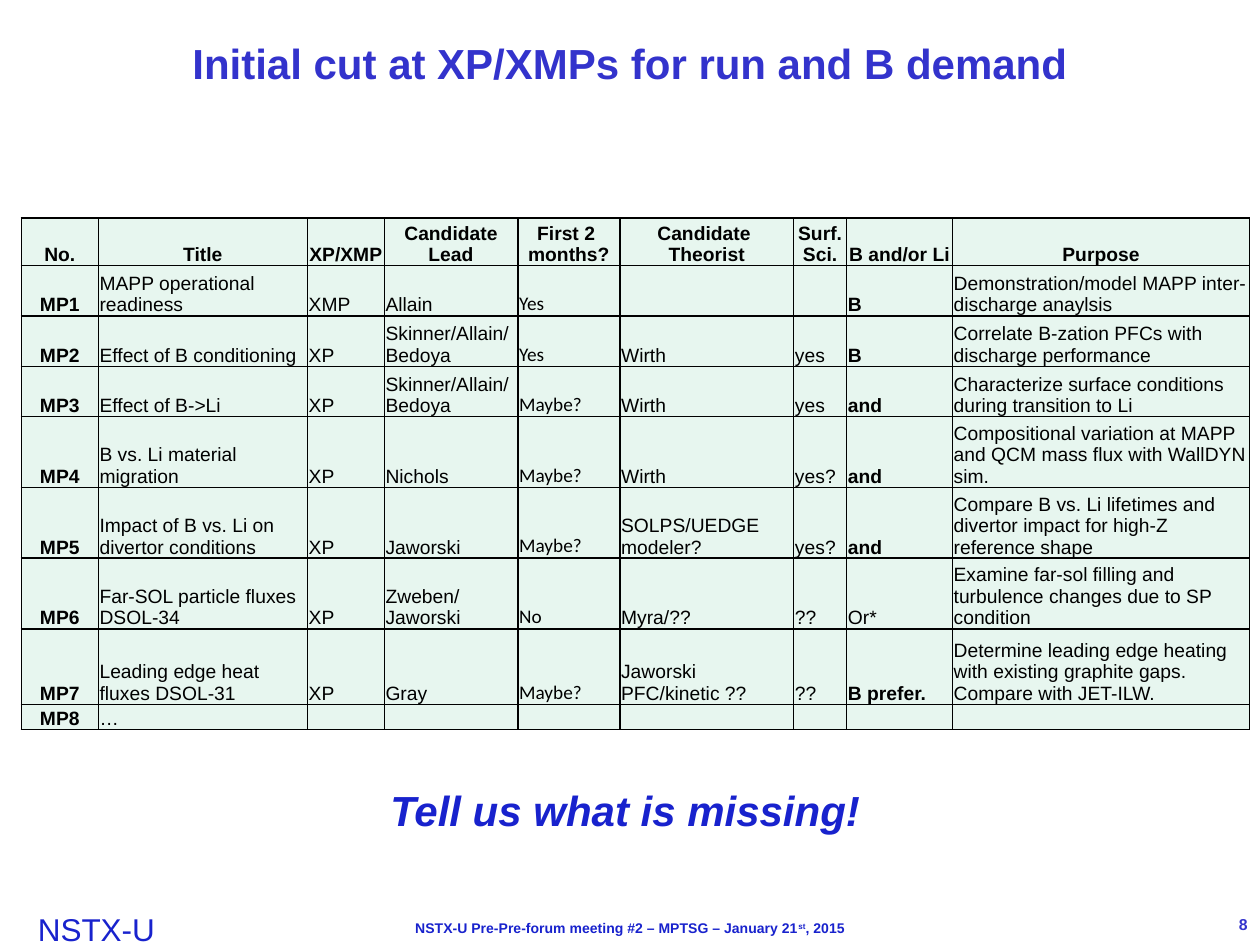
import dataclasses

import pptx
import pptx.dml.color
import pptx.enum.text
import pptx.oxml.ns
import pptx.util
from lxml import etree

ALIGN = pptx.enum.text.PP_ALIGN
ANCHOR = pptx.enum.text.MSO_ANCHOR


@dataclasses.dataclass(frozen=True)
class Theme:
    """Colours, fonts, type sizes and the grid step of the slide."""
    title: str = "3333CC"
    accent: str = "1822CD"
    ink: str = "000000"
    cell: str = "E7F6EF"
    font: str = "Arial"
    answer_font: str = "Calibri"
    headline_size: int = 24
    brand_size: int = 18
    table_size: int = 11
    number_size: int = 9
    footer_size: int = 8
    rule_width: int = 1
    cell_margin: float = 0.75
    grid_step: float = 0.1


THEME = Theme()

COLUMN_WIDTHS = [6.1, 16.6, 6.1, 10.6, 8.1, 13.8, 4.2, 8.4, 23.6]
ROW_HEIGHTS = [3.5, 4, 4, 4, 5.2, 5.2, 5.2, 6, 2]
ANSWER_COLUMN, DEMAND_COLUMN = 4, 7
HEADER = ["No.", "Title", "XP/XMP", "Candidate Lead", "First 2 \nmonths?",
          "Candidate \nTheorist", "Surf. Sci.", "B and/or Li", "Purpose"]
PROPOSALS = [
    ["MP1", "MAPP operational readiness", "XMP", "Allain", "Yes", "", "", "B",
     "Demonstration/model MAPP inter-discharge anaylsis"],
    ["MP2", "Effect of B conditioning", "XP", "Skinner/Allain/\nBedoya", "Yes",
     "Wirth", "yes", "B", "Correlate B-zation PFCs with discharge performance"],
    ["MP3", "Effect of B->Li", "XP", "Skinner/Allain/\nBedoya", "Maybe?",
     "Wirth", "yes", "and",
     "Characterize surface conditions during transition to Li"],
    ["MP4", "B vs. Li material migration", "XP", "Nichols", "Maybe?", "Wirth",
     "yes?", "and",
     "Compositional variation at MAPP and QCM mass flux with WallDYN sim."],
    ["MP5", "Impact of B vs. Li on divertor conditions", "XP", "Jaworski",
     "Maybe?", "SOLPS/UEDGE modeler?", "yes?", "and",
     "Compare B vs. Li lifetimes and divertor impact for high-Z reference shape"],
    ["MP6", "Far-SOL particle fluxes DSOL-34", "XP", "Zweben/\nJaworski", "No",
     "Myra/??", "??", "Or*",
     "Examine far-sol filling and turbulence changes due to SP condition"],
    ["MP7", "Leading edge heat fluxes DSOL-31", "XP", "Gray", "Maybe?",
     "Jaworski PFC/kinetic ??", "??", "B prefer.",
     "Determine leading edge heating with existing graphite gaps. "
     "Compare with JET-ILW."],
    ["MP8", "…", "", "", "", "", "", "", ""],
]


def grid(steps):
    """Turn a count of grid steps into a length."""
    return pptx.util.Inches(round(steps * THEME.grid_step, 2))


def style_font(font, size, color, bold=False, italic=False, name=THEME.font):
    """Set the face, size, colour and weight of a font."""
    font.name, font.size = name, pptx.util.Pt(size)
    font.bold, font.italic = bold, italic
    font.color.rgb = pptx.dml.color.RGBColor.from_string(color)


def add_span(para, text, size, color, **style):
    """Add one run to a paragraph and return it."""
    span = para.add_run()
    span.text = text
    style_font(span.font, size, color, **style)
    return span


def add_box(page, area, align=ALIGN.LEFT, anchor=ANCHOR.TOP, wrap=True, margin=None):
    """Add a text box on the grid and return its first paragraph."""
    box = page.shapes.add_textbox(*map(grid, area))
    frame = box.text_frame
    frame.word_wrap, frame.vertical_anchor = wrap, anchor
    if margin is not None:
        frame.margin_left = frame.margin_right = margin
        frame.margin_top = frame.margin_bottom = margin
    para = frame.paragraphs[0]
    para.alignment = align
    return para


def rule_cell(cell):
    """Draw a line on every side of a table cell."""
    properties = cell._tc.get_or_add_tcPr()
    qn = pptx.oxml.ns.qn
    for index, side in enumerate(("a:lnL", "a:lnR", "a:lnT", "a:lnB")):
        line = etree.Element(qn(side), w=str(pptx.util.Pt(THEME.rule_width)))
        fill = etree.SubElement(line, qn("a:solidFill"))
        etree.SubElement(fill, qn("a:srgbClr"), val=THEME.ink)
        properties.insert(index, line)


def fill_cell(cell, text, align, **style):
    """Write, colour and rule one table cell."""
    cell.fill.solid()
    cell.fill.fore_color.rgb = pptx.dml.color.RGBColor.from_string(THEME.cell)
    cell.vertical_anchor = ANCHOR.BOTTOM
    cell.margin_left = cell.margin_right = pptx.util.Pt(THEME.cell_margin)
    cell.margin_top, cell.margin_bottom = pptx.util.Pt(THEME.cell_margin), 0
    para = cell.text_frame.paragraphs[0]
    para.alignment = align
    style_font(para.font, THEME.table_size, THEME.ink, **style)
    for index, line in enumerate(text.split("\n") if text else []):
        if index:
            para.add_line_break()
        add_span(para, line, THEME.table_size, THEME.ink, **style)
    rule_cell(cell)


def add_proposal_table(page, left, top):
    """Add the table of proposed experiments."""
    area = (left, top, sum(COLUMN_WIDTHS), sum(ROW_HEIGHTS))
    frame = page.shapes.add_table(len(ROW_HEIGHTS), len(COLUMN_WIDTHS),
                                  *map(grid, area))
    table = frame.table
    table.first_row = table.horz_banding = False
    for column, width in zip(table.columns, COLUMN_WIDTHS):
        column.width = grid(width)
    for row, height in zip(table.rows, ROW_HEIGHTS):
        row.height = grid(height)
    for r, texts in enumerate([HEADER] + PROPOSALS):
        for c, text in enumerate(texts):
            heading = r == 0 or c == 0
            answer = r > 0 and c == ANSWER_COLUMN
            demand = c == DEMAND_COLUMN and text != "Or*"
            fill_cell(table.cell(r, c), text,
                      ALIGN.CENTER if heading else ALIGN.LEFT,
                      bold=heading or demand,
                      name=THEME.answer_font if answer else THEME.font)


def add_footer(page):
    """Add the machine name, the meeting line and the page number."""
    brand = add_box(page, (3, 72.2, 11.2, 2), margin=0)
    add_span(brand, "NSTX-U", THEME.brand_size, THEME.accent)
    meeting = add_box(page, (20, 72.5, 60, 2.4), ALIGN.CENTER)
    for text, raised in (("NSTX-U Pre-Pre-forum meeting #2 – MPTSG – January 21", False),
                         ("st", True), (", 2015", False)):
        span = add_span(meeting, text, THEME.footer_size, THEME.accent, bold=True)
        if raised:
            span.font._element.set("baseline", "30000")
    number = add_box(page, (91.7, 72.5, 8.3, 1.7), ALIGN.RIGHT, ANCHOR.MIDDLE)
    add_span(number, "8", THEME.number_size, THEME.title, bold=True)


def main():
    """Build the slide and save it."""
    deck = pptx.Presentation()
    deck.slide_width, deck.slide_height = grid(100), grid(75)
    page = deck.slides.add_slide(deck.slide_layouts[6])
    title = add_box(page, (0, 0, 100, 10), ALIGN.CENTER, ANCHOR.MIDDLE)
    add_span(title, "Initial cut at XP/XMPs for run and B demand",
             THEME.headline_size, THEME.title, bold=True)
    add_proposal_table(page, 1.7, 17.3)
    appeal = add_box(page, (30, 61.8, 39.6, 5), wrap=False)
    add_span(appeal, "Tell us what is missing!", THEME.headline_size,
             THEME.accent, bold=True, italic=True)
    add_footer(page)
    deck.save("out.pptx")


if __name__ == "__main__":
    main()
